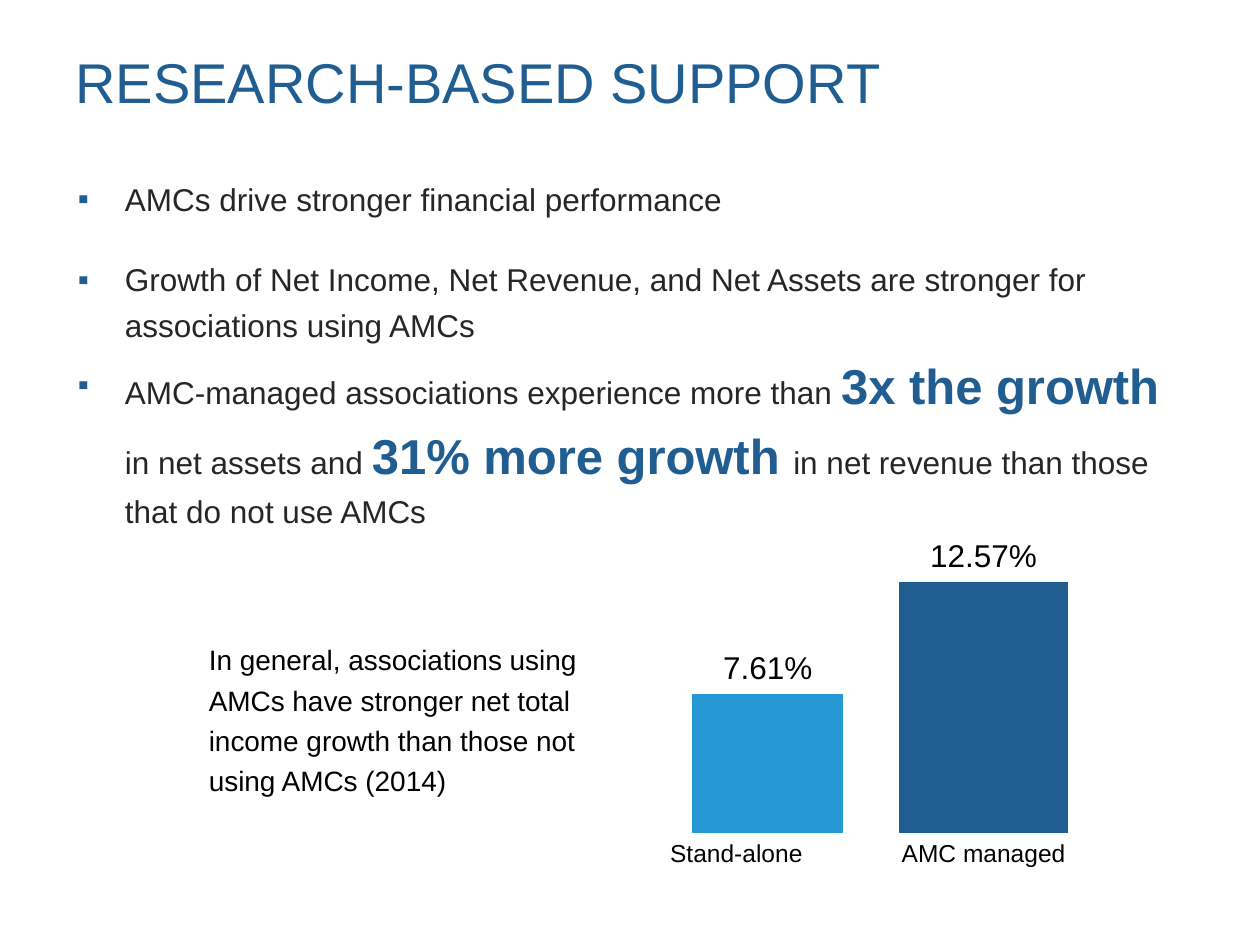
from lxml import etree
from pptx import Presentation
from pptx.dml.color import RGBColor
from pptx.enum.shapes import MSO_SHAPE
from pptx.enum.text import PP_ALIGN
from pptx.oxml.ns import qn
from pptx.util import Cm, Pt

RECT = MSO_SHAPE.RECTANGLE
LEFT, MID = PP_ALIGN.LEFT, PP_ALIGN.CENTER

THEME = {
    "font": "Arial",
    "navy": "205D91",
    "sky": "2598D5",
    "ink": "262626",
    "black": "000000",
}
STYLES = {
    "title": {"size": 32, "color": "navy", "bold": False},
    "body": {"size": 18, "color": "ink", "bold": False},
    "strong": {"size": 28, "color": "navy", "bold": True},
    "note": {"size": 16, "color": "black", "bold": False},
    "value": {"size": 18, "color": "black", "bold": False},
    "label": {"size": 14, "color": "black", "bold": False},
}

TITLE = [("RESEARCH-BASED SUPPORT", "title")]
POINTS = [
    [("AMCs drive stronger financial performance", "body")],
    [("Growth of Net Income, Net Revenue, and Net Assets are stronger for "
      "associations using AMCs", "body")],
    [("AMC-managed associations experience more than ", "body"),
     ("3x the growth ", "strong"),
     ("in net assets and ", "body"),
     ("31% more growth ", "strong"),
     ("in net revenue than those that do not use AMCs", "body")],
]
GAPS = [0, 20, 0]
NOTE = [("In general, associations using AMCs have stronger net total income "
         "growth than those not using AMCs (2014)", "note")]
BARS = [
    {"name": "Stand-alone", "value": "7.61%", "fill": "sky", "left": 13.97,
     "wide": 3.02, "high": 2.79, "label": (13.26, 4.44), "align": LEFT},
    {"name": "AMC managed", "value": "12.57%", "fill": "navy", "left": 18.14,
     "wide": 3.38, "high": 5.05, "label": (16.87, 5.92), "align": MID},
]
BASE = 16.79
TAG_W, TAG_H = 2.9, 1.02


def tint(name):
    return RGBColor.from_string(THEME[name])


def add_mark(para):
    props = para._p.get_or_add_pPr()
    props.set("marL", str(Cm(0.95)))
    props.set("indent", str(-Cm(0.95)))
    color = etree.SubElement(props, qn("a:buClr"))
    etree.SubElement(color, qn("a:srgbClr"), val=THEME["navy"])
    etree.SubElement(props, qn("a:buFont"), typeface=THEME["font"])
    etree.SubElement(props, qn("a:buChar"), char="▪")


def add_text(shapes, area, paras, align=LEFT, pitch=1.0, gaps=(0,), marks=False):
    frame = shapes.add_textbox(*map(Cm, area)).text_frame
    frame.word_wrap = True
    for spot, (runs, gap) in enumerate(zip(paras, gaps)):
        para = frame.add_paragraph() if spot else frame.paragraphs[0]
        if marks:
            add_mark(para)
        form = {"alignment": align, "line_spacing": pitch, "space_before": Pt(gap)}
        for key, val in form.items():
            setattr(para, key, val)
        for text, name in runs:
            run = para.add_run()
            run.text = text
            style = STYLES[name]
            form = {"name": THEME["font"], "size": Pt(style["size"]),
                    "bold": style["bold"]}
            for key, val in form.items():
                setattr(run.font, key, val)
            run.font.color.rgb = tint(style["color"])


def add_bar(shapes, bar):
    top = BASE - bar["high"]
    area = bar["left"], top, bar["wide"], bar["high"]
    shape = shapes.add_shape(RECT, *map(Cm, area))
    shape.shadow.inherit = False
    shape.fill.solid()
    shape.fill.fore_color.rgb = tint(bar["fill"])
    shape.line.color.rgb = tint(bar["fill"])
    shape.line.width = Pt(0.75)
    tag = bar["left"] + (bar["wide"] - TAG_W) / 2, top - 1.06, TAG_W, TAG_H
    add_text(shapes, tag, [[(bar["value"], "value")]], MID)
    left, wide = bar["label"]
    add_text(shapes, (left, BASE - 0.03, wide, 0.86),
             [[(bar["name"], "label")]], bar["align"])


def main():
    deck = Presentation()
    deck.slide_width, deck.slide_height = Cm(25.4), Cm(19.05)
    shapes = deck.slides.add_slide(deck.slide_layouts[6]).shapes
    add_text(shapes, (1.27, 0.99, 22.86, 3.18), [TITLE], pitch=0.9)
    add_text(shapes, (1.32, 3.35, 22.86, 12.57), POINTS,
             pitch=1.2, gaps=GAPS, marks=True)
    add_text(shapes, (3.96, 12.7, 8.36, 3.51), [NOTE], pitch=1.2)
    group = shapes.add_group_shape()
    for bar in BARS:
        add_bar(group.shapes, bar)
    deck.save("out.pptx")


if __name__ == "__main__":
    main()
